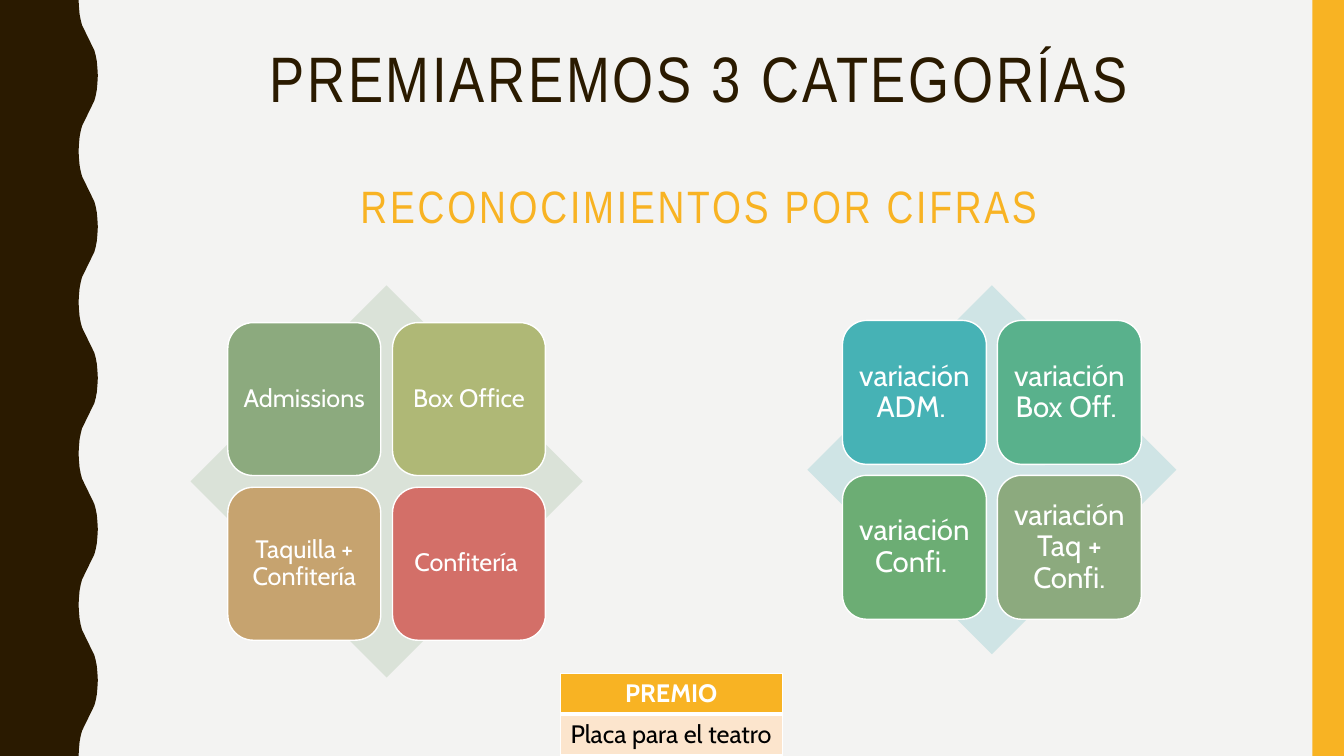
from lxml.etree import SubElement
from pptx import Presentation
from pptx.dml.color import RGBColor
from pptx.enum.shapes import MSO_SHAPE as Preset
from pptx.enum.text import MSO_ANCHOR as Anchor, PP_ALIGN as Align
from pptx.oxml.ns import qn
from pptx.util import Inches, Pt

WIDTH, HEIGHT = Inches(13.333), Inches(7.5)
HEADING_FONT, BODY_FONT = "Arial Narrow", "Cabin"
COLORS = {
    "paper": "F3F3F2", "brown": "2A1A00", "amber": "F8B323", "peach": "FCE5CD",
    "white": "FFFFFF", "black": "000000", "sage": "8CAA7E", "olive": "AFB876",
    "tan": "C6A36F", "coral": "D36F68", "teal": "46B2B5", "jade": "59B18C",
    "green": "6CAD74", "pale sage": "DAE2D8", "pale teal": "CFE4E5",
}
# Half a wave: row below the trough, share of the way out to the crest
HALF_WAVE = [(0, 0), (0.95, 0.02), (1.87, 0.05), (2.67, 0.11), (3.33, 0.18),
             (6.67, 0.82), (7.33, 0.89), (8.13, 0.95), (9.05, 0.98)]
HALF_WAVE_ROWS = 10

FIGURES = [("Admissions", "sage"), ("Box Office", "olive"),
           ("Taquilla + Confitería", "tan"), ("Confitería ", "coral")]
VARIATIONS = [("variación ADM. ", "teal"), ("variación Box Off. ", "jade"),
              ("variación Confi. ", "green"), ("variación Taq + Confi.", "sage")]


def cols(count):
    """Length of count columns, of 100 across the slide."""
    return round(WIDTH * count / 100)


def rows(count):
    """Length of count rows, of 100 down the slide."""
    return round(HEIGHT * count / 100)


def rgb(color):
    return RGBColor.from_string(COLORS[color])


def paint(shape, color, outline=None):
    shape.shadow.inherit = False
    shape.fill.solid()
    shape.fill.fore_color.rgb = rgb(color)
    if outline:
        shape.line.color.rgb = rgb(outline)
        shape.line.width = Pt(1)
    else:
        shape.line.fill.background()


def write(paragraph, text, font, size, color, align=Align.CENTER, bold=False):
    paragraph.text = text
    paragraph.alignment = align
    run = paragraph.runs[0]
    run.font.name, run.font.size, run.font.bold = font, Pt(size), bold
    run.font.color.rgb = rgb(color)
    return run


def add_preset(slide, preset, left, top, width, height, color, outline=None):
    shape = slide.shapes.add_shape(preset, left, top, width, height)
    paint(shape, color, outline)
    return shape


def add_wavy_edge(slide):
    trough, crest = cols(5.85), cols(7.28)
    edge = []
    for half in range(100 // HALF_WAVE_ROWS):
        for row, share in HALF_WAVE:
            reach = 1 - share if half % 2 else share
            edge.append((round(trough + (crest - trough) * reach),
                         rows(half * HALF_WAVE_ROWS + row)))
    builder = slide.shapes.build_freeform(0, 0)
    builder.add_line_segments(edge + [(trough, HEIGHT), (0, HEIGHT)], close=True)
    paint(builder.convert_to_shape(), "brown")


def add_heading(slide):
    box = slide.shapes.add_textbox(cols(10.28), rows(5.6), cols(83.48), rows(21.73))
    frame = box.text_frame
    frame.word_wrap = True
    title, subtitle = frame.paragraphs[0], frame.add_paragraph()
    runs = [write(title, "PREMIAREMOS 3 CATEGORÍAS", HEADING_FONT, 45.9, "brown"),
            write(subtitle, "RECONOCIMIENTOS POR CIFRAS", HEADING_FONT, 32.4, "amber")]
    subtitle.space_before = Pt(48)
    for paragraph, run in zip((title, subtitle), runs):
        paragraph.line_spacing = 0.9
        run.font._element.set("spc", "200")


def add_matrix(slide, left, top, size, backdrop, tiles, font_size, inset):
    """Two by two tiles over a diamond, all in proportion to its size."""
    add_preset(slide, Preset.DIAMOND, left, top, size, size, backdrop)
    margin, pitch, side = (round(size * share) for share in (0.095, 0.42, 0.39))
    for index, (label, color) in enumerate(tiles):
        row, column = divmod(index, 2)
        tile = add_preset(slide, Preset.ROUNDED_RECTANGLE,
                          left + margin + column * pitch, top + margin + row * pitch,
                          side, side, color, "white")
        frame = tile.text_frame
        frame.word_wrap = True
        frame.vertical_anchor = Anchor.MIDDLE
        frame.margin_left = frame.margin_right = Inches(inset)
        frame.margin_top = frame.margin_bottom = Inches(inset)
        write(frame.paragraphs[0], label, BODY_FONT, font_size, "white")
        frame.paragraphs[0].line_spacing = 0.9


def border_cell(cell, bottom_width):
    properties = cell._tc.get_or_add_tcPr()
    widths = {"a:lnL": 1, "a:lnR": 1, "a:lnT": 1, "a:lnB": bottom_width}
    for tag, width in widths.items():
        line = SubElement(properties, qn(tag), w=str(Pt(width)))
        fill = SubElement(line, qn("a:solidFill"))
        SubElement(fill, qn("a:srgbClr"), val=COLORS["white"])


def add_prize_table(slide):
    table = slide.shapes.add_table(2, 1, cols(41.7), rows(89.07),
                                   cols(16.5), rows(10.8)).table
    entries = [("PREMIO", "amber", "white", Align.CENTER, True, 3),
               ("Placa para el teatro", "peach", "black", Align.LEFT, False, 1)]
    for row, (text, fill, color, align, bold, bottom_width) in enumerate(entries):
        cell = table.cell(row, 0)
        write(cell.text_frame.paragraphs[0], text, BODY_FONT, 18, color, align, bold)
        border_cell(cell, bottom_width)
        cell.fill.solid()
        cell.fill.fore_color.rgb = rgb(fill)
    table.cell(1, 0).margin_top = table.cell(0, 0).margin_top


def main():
    deck = Presentation()
    deck.slide_width, deck.slide_height = WIDTH, HEIGHT
    slide = deck.slides.add_slide(deck.slide_layouts[6])
    slide.background.fill.solid()
    slide.background.fill.fore_color.rgb = rgb("paper")

    add_wavy_edge(slide)
    add_preset(slide, Preset.RECTANGLE, cols(97.65), 0, cols(2.35), HEIGHT, "amber")
    add_heading(slide)
    add_matrix(slide, cols(14.18), rows(37.75), rows(51.87), "pale sage", FIGURES, 18, 0.07)
    add_matrix(slide, cols(60.08), rows(37.75), rows(48.8), "pale teal", VARIATIONS, 21, 0.09)
    add_prize_table(slide)
    deck.save("out.pptx")


if __name__ == "__main__":
    main()
